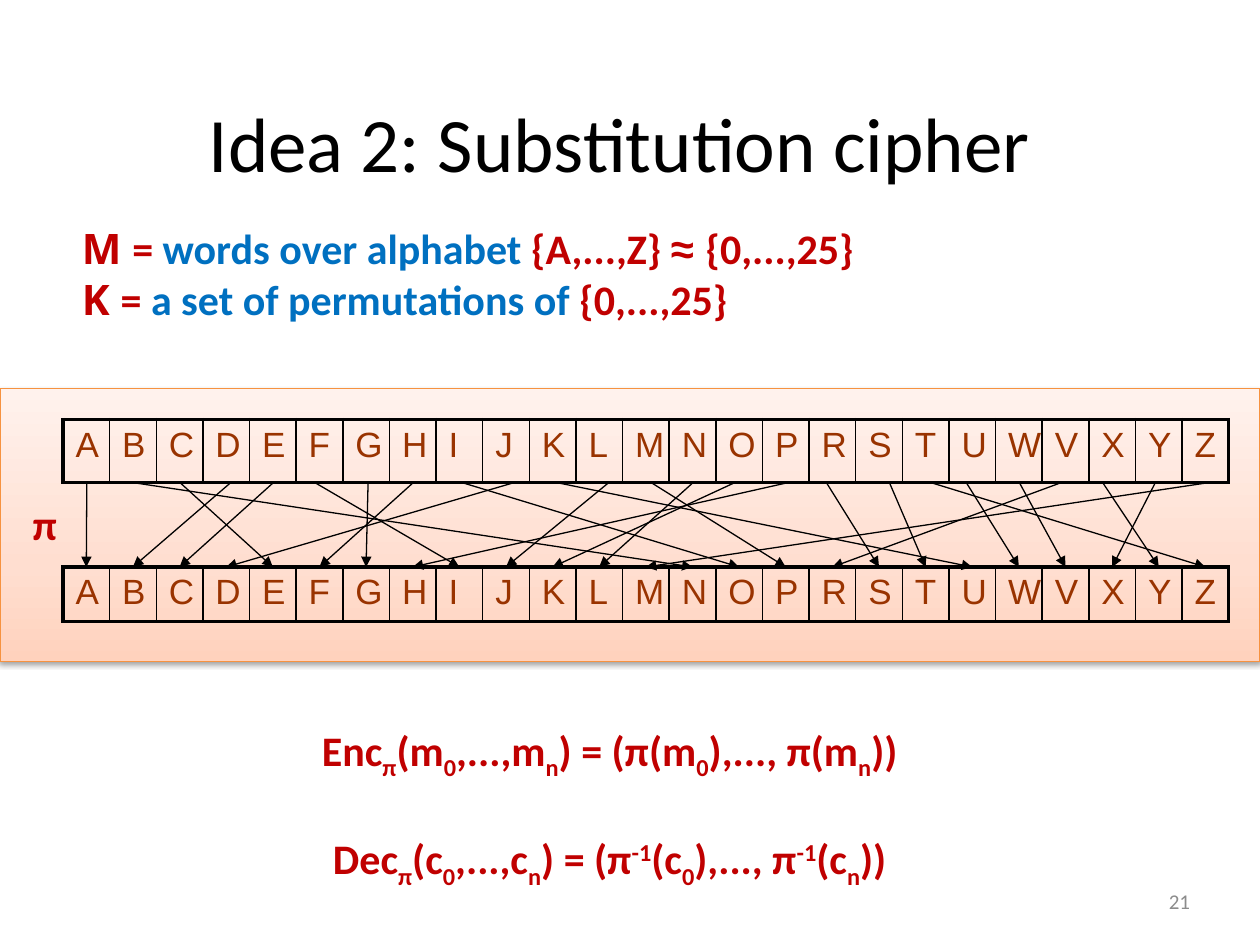
import copy
from dataclasses import dataclass

import pptx
import pptx.dml.color
import pptx.enum.shapes
import pptx.enum.text
import pptx.oxml
import pptx.oxml.ns
import pptx.util
from pptx.util import Cm, Pt

COLORS = {
    "black": "000000", "red": "C00000", "blue": "0070C0", "grey": "8C8C8C",
    "letter": "993300", "band_edge": "F69240",
    "band_bottom": "FFD2BD", "band_middle": "FFDED0", "band_top": "FFF2ED",
}
ALIGN = pptx.enum.text.PP_ALIGN
ANCHOR = pptx.enum.text.MSO_ANCHOR
qn = pptx.oxml.ns.qn

ALPHABET = "ABCDEFGHIJKLMNOPRSTUWVXYZ"
PERMUTED = "ANEBCIGFODUJPLKHSTZWVRYXM"
# Where the arrow of each letter leaves the upper row, in cm
ARROW_STARTS = [
    1.75, 2.69, 3.63, 4.65, 5.51, 6.35, 7.42, 8.33, 9.32, 10.36, 11.23, 12.27, 13.13,
    13.97, 14.81, 15.88, 16.66, 17.93, 18.77, 19.48, 20.55, 21.39, 22.23, 23.29, 24.36,
]
ROW_LEFT, CELL_WIDTH = 1.27, 0.94
PLAIN_TOP, PLAIN_HEIGHT = 8.46, 1.27
CIPHER_TOP, CIPHER_HEIGHT = 11.43, 1.08
SUB, SUP = -25000, 30000


@dataclass
class Piece:
    text: str
    color: str = ""
    font: str = ""
    baseline: int = 0


@dataclass
class TextBlock:
    left: float
    top: float
    width: float
    height: float
    lines: list[list[Piece]]
    size: float = 24
    color: str = "red"
    bold: bool = True
    align: ALIGN = ALIGN.LEFT
    anchor: ANCHOR = ANCHOR.TOP
    wrap: bool = True
    line_gap: float = 0


def rgb(name: str) -> pptx.dml.color.RGBColor:
    return pptx.dml.color.RGBColor.from_string(COLORS[name])


def add_text(slide, block: TextBlock) -> None:
    box = slide.shapes.add_textbox(Cm(block.left), Cm(block.top), Cm(block.width), Cm(block.height))
    frame = box.text_frame
    frame.word_wrap = block.wrap
    frame.vertical_anchor = block.anchor
    for number, pieces in enumerate(block.lines):
        paragraph = frame.add_paragraph() if number else frame.paragraphs[0]
        paragraph.alignment = block.align
        if number:
            paragraph.space_before = Pt(block.line_gap)
        paragraph.font.name = "Calibri"
        paragraph.font.size = Pt(block.size)
        paragraph.font.bold = block.bold
        paragraph.font.color.rgb = rgb(block.color)
        for piece in pieces:
            run = paragraph.add_run()
            run.text = piece.text
            if piece.color:
                run.font.color.rgb = rgb(piece.color)
            if piece.font:
                run.font.name = piece.font
            if piece.baseline:
                run._r.get_or_add_rPr().set("baseline", str(piece.baseline))


def add_band(slide) -> None:
    band = slide.shapes.add_shape(
        pptx.enum.shapes.MSO_SHAPE.RECTANGLE, Cm(0), Cm(7.83), Cm(25.4), Cm(5.5))
    band.line.color.rgb = rgb("band_edge")
    band.line.width = Pt(0.75)
    band.fill.gradient()
    band.fill.gradient_angle = 90
    stop_list = band._element.spPr.find(".//" + qn("a:gsLst"))
    stop_list.append(copy.deepcopy(stop_list[-1]))
    shades = [(0, "band_bottom"), (0.35, "band_middle"), (1, "band_top")]
    for stop, (position, shade) in zip(band.fill.gradient_stops, shades):
        stop.position = position
        stop.color.rgb = rgb(shade)
    band.shadow.inherit = False
    band._element.spPr.find(qn("a:effectLst")).append(pptx.oxml.parse_xml(
        f'<a:outerShdw {pptx.oxml.ns.nsdecls("a")} blurRad="{Pt(3.1)}" dist="{Pt(1.6)}" '
        f'dir="5400000" rotWithShape="0"><a:srgbClr val="{COLORS["black"]}">'
        '<a:alpha val="38000"/></a:srgbClr></a:outerShdw>'))


def set_borders(cell, widths: dict[str, float]) -> None:
    """Draw cell borders; they must precede the fill in the cell properties."""
    properties = cell._tc.get_or_add_tcPr()
    for index, (side, width) in enumerate(widths.items()):
        properties.insert(index, pptx.oxml.parse_xml(
            f'<a:{side} {pptx.oxml.ns.nsdecls("a")} w="{Pt(width)}"><a:solidFill>'
            f'<a:srgbClr val="{COLORS["black"]}"/></a:solidFill></a:{side}>'))


def add_alphabet_row(slide, top: float, height: float) -> None:
    count = len(ALPHABET)
    table = slide.shapes.add_table(
        1, count, Cm(ROW_LEFT), Cm(top), Cm(CELL_WIDTH * count), Cm(height)).table
    table.first_row = False
    table.horz_banding = False
    for index, letter in enumerate(ALPHABET):
        table.columns[index].width = Cm(CELL_WIDTH)
        cell = table.cell(0, index)
        cell.text = letter
        cell.fill.background()
        font = cell.text_frame.paragraphs[0].font
        font.name = "Arial"
        font.size = Pt(20)
        font.color.rgb = rgb("letter")
        set_borders(cell, {
            "lnL": 2.25 if index == 0 else 1,
            "lnR": 2.25 if index == count - 1 else 1,
            "lnT": 2.25,
            "lnB": 2.25,
        })


def add_arrow(slide, start_x: float, target: str) -> None:
    end_x = ROW_LEFT + CELL_WIDTH * (ALPHABET.index(target) + 0.5)
    arrow = slide.shapes.add_connector(
        pptx.enum.shapes.MSO_CONNECTOR.STRAIGHT,
        Cm(start_x), Cm(PLAIN_TOP + PLAIN_HEIGHT), Cm(end_x), Cm(CIPHER_TOP))
    arrow.line.color.rgb = rgb("black")
    arrow.line.width = Pt(0.75)
    arrow.line._get_or_add_ln().append(pptx.oxml.parse_xml(
        f'<a:tailEnd {pptx.oxml.ns.nsdecls("a")} type="triangle"/>'))
    arrow._element.spPr.append(pptx.oxml.parse_xml(
        f'<a:effectLst {pptx.oxml.ns.nsdecls("a")}/>'))


def sub(text: str) -> Piece:
    return Piece(text, baseline=SUB)


def cipher_formula(name: str, symbol: str, power: str = "") -> list[Piece]:
    """Spell out name_π(symbol_0,...,symbol_n) with π raised to power."""
    raised = [Piece(power, baseline=SUP)] if power else []
    return [
        Piece(name), sub("π"), Piece(f"({symbol}"), sub("0"), Piece(f",...,{symbol}"), sub("n"),
        Piece(") = (π"), *raised, Piece(f"({symbol}"), sub("0"),
        Piece("),..., π"), *raised, Piece(f"({symbol}"), sub("n"), Piece("))"),
    ]


def main() -> None:
    deck = pptx.Presentation()
    deck.slide_width, deck.slide_height = Cm(25.4), Cm(19.05)
    slide = deck.slides.add_slide(deck.slide_layouts[6])

    add_text(slide, TextBlock(18.21, 17.65, 6.03, 1.02, [[Piece("21")]], size=12, color="grey",
                              bold=False, align=ALIGN.RIGHT, anchor=ANCHOR.MIDDLE))
    add_band(slide)
    add_text(slide, TextBlock(1.7, 1.27, 21.59, 3.18, [[Piece("Idea 2: Substitution cipher")]],
                              size=44, color="black", bold=False,
                              align=ALIGN.CENTER, anchor=ANCHOR.MIDDLE))
    add_alphabet_row(slide, PLAIN_TOP, PLAIN_HEIGHT)
    add_alphabet_row(slide, CIPHER_TOP, CIPHER_HEIGHT)
    for start_x, target in zip(ARROW_STARTS, PERMUTED):
        add_arrow(slide, start_x, target)

    message_space = [
        Piece("M ", font="Open Sans"), Piece("= "), Piece("words over alphabet ", "blue"),
        Piece("{A,...,Z} "), Piece("≈ ", font="Arial"), Piece("{0,...,25}"),
    ]
    key_space = [
        Piece("K ", font="Open Sans"), Piece("= "),
        Piece("a set of permutations of ", "blue"), Piece("{0,...,25}"),
    ]
    add_text(slide, TextBlock(1.4, 4.37, 19.46, 2.31, [message_space, key_space]))
    add_text(slide, TextBlock(0.41, 9.93, 1.02, 1.27, [[Piece("π")]], wrap=False))
    formulas = [cipher_formula("Enc", "m"), cipher_formula("Dec", "c", "-1")]
    add_text(slide, TextBlock(5.94, 14.48, 12.7, 3.33, formulas,
                              align=ALIGN.CENTER, line_gap=29))
    deck.save("out.pptx")


if __name__ == "__main__":
    main()
